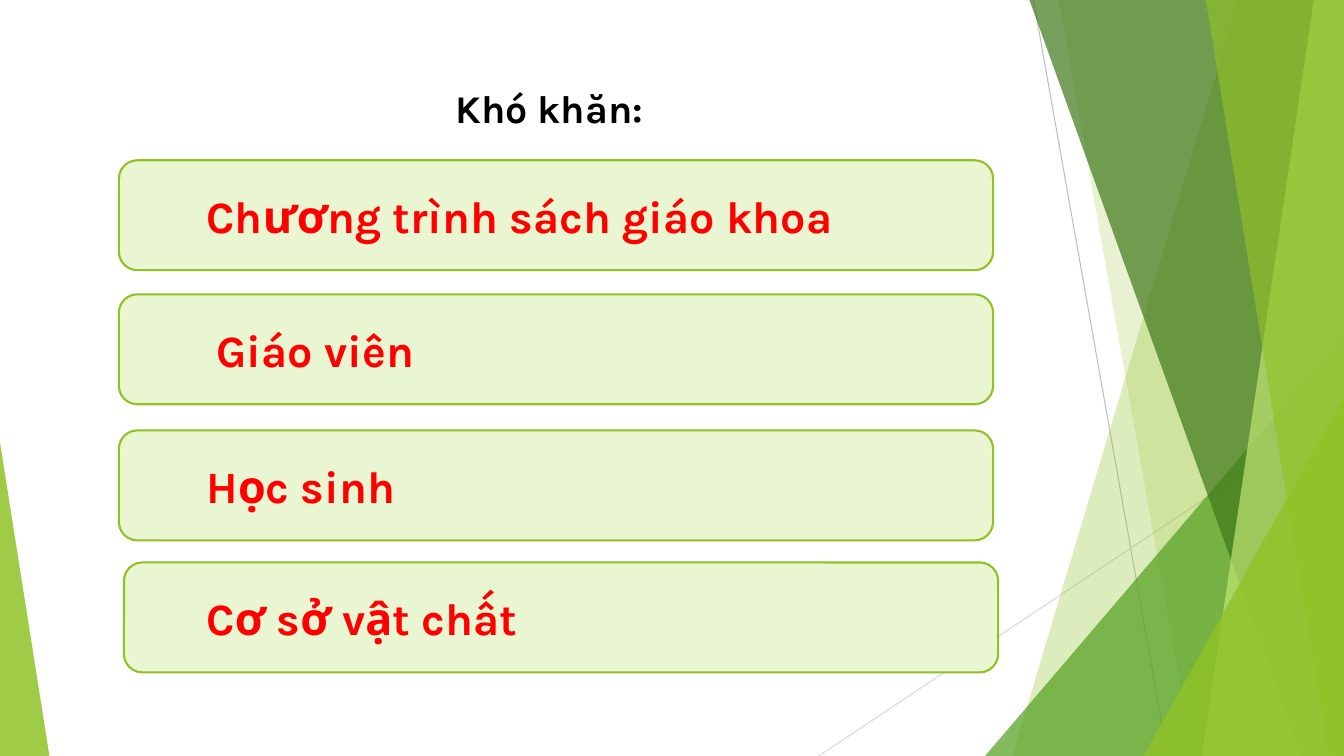
import pptx
import pptx.dml.color
import pptx.enum.shapes
import pptx.enum.text
import pptx.oxml.ns
import pptx.util
from lxml import etree

Inches = pptx.util.Inches
RGBColor = pptx.dml.color.RGBColor
MSO_SHAPE = pptx.enum.shapes.MSO_SHAPE
qn = pptx.oxml.ns.qn

WHITE = RGBColor(0xFF, 0xFF, 0xFF)
BLACK = RGBColor(0, 0, 0)
RED = RGBColor(0xFF, 0, 0)
GREY = RGBColor(0xBF, 0xBF, 0xBF)
PALE_GREY = RGBColor(0xD9, 0xD9, 0xD9)
LIME = RGBColor(0x90, 0xC2, 0x26)
PALE_LIME = RGBColor(0xC0, 0xE4, 0x74)
LEAF = RGBColor(0x54, 0xA0, 0x21)
FOREST = RGBColor(0x3F, 0x78, 0x19)
CARD_FILL = RGBColor(0xEA, 0xF6, 0xD1)

WIDTH, HEIGHT = 13.33, 7.5


class SlideBuilder:
    """Holds the text style and the slide being built."""

    font_format = {"name": "Karla", "bold": True}
    frame_format = {
        "word_wrap": True,
        "auto_size": pptx.enum.text.MSO_AUTO_SIZE.SHAPE_TO_FIT_TEXT,
        "vertical_anchor": pptx.enum.text.MSO_ANCHOR.TOP,
    }

    def __init__(self, slide):
        self.slide = slide
        slide.background.fill.solid()
        slide.background.fill.fore_color.rgb = WHITE

    def paint(self, shape, color, opacity=100):
        shape.shadow.inherit = False
        shape.line.fill.background()
        shape.fill.solid()
        shape.fill.fore_color.rgb = color
        if opacity < 100:
            tint = shape._element.spPr.find(".//" + qn("a:srgbClr"))
            etree.SubElement(tint, qn("a:alpha"), val=str(opacity * 1000))

    def ray(self, start, end, color):
        ray = self.slide.shapes.add_connector(
            pptx.enum.shapes.MSO_CONNECTOR.STRAIGHT,
            *map(Inches, start + end))
        ray.line.color.rgb = color
        ray.line.width = pptx.util.Pt(0.75)
        etree.SubElement(ray._element.spPr, qn("a:effectLst"))

    def band(self, top_left, bottom_left, color, opacity):
        """Full-height facet that reaches the right edge of the slide."""
        corners = [(WIDTH, 0), (WIDTH, HEIGHT), (bottom_left, HEIGHT)]
        outline = self.slide.shapes.build_freeform(Inches(top_left), 0)
        outline.add_line_segments(
            [(Inches(x), Inches(y)) for x, y in corners], close=True)
        self.paint(outline.convert_to_shape(), color, opacity)

    def corner(self, left, top, width, apex, color, opacity):
        """Triangle that stands on the bottom edge of the slide."""
        corner = self.slide.shapes.add_shape(
            MSO_SHAPE.ISOSCELES_TRIANGLE,
            *map(Inches, (left, top, width, HEIGHT - top)))
        corner.adjustments[0] = apex
        self.paint(corner, color, opacity)

    def card(self, left, top):
        card = self.slide.shapes.add_shape(
            MSO_SHAPE.ROUNDED_RECTANGLE,
            *map(Inches, (left, top, 8.67, 1.09)))
        self.paint(card, CARD_FILL)
        card.line.color.rgb = LIME
        card.line.width = pptx.util.Pt(1.5)

    def add_wording(self, holder, text, size, color):
        frame = holder.text_frame
        for name, value in self.frame_format.items():
            setattr(frame, name, value)
        paragraph = frame.paragraphs[0]
        paragraph.alignment = pptx.enum.text.PP_ALIGN.LEFT
        run = paragraph.add_run()
        run.text = text
        font_format = {**self.font_format, "size": pptx.util.Pt(size)}
        for name, value in font_format.items():
            setattr(run.font, name, value)
        run.font.color.rgb = color

    def heading(self, text, left, top, width, height):
        heading = self.slide.shapes.title
        place = {"left": left, "top": top, "width": width, "height": height}
        for name, value in place.items():
            setattr(heading, name, Inches(value))
        self.add_wording(heading, text, 28, BLACK)

    def label(self, text, left, top, width):
        label = self.slide.shapes.add_textbox(
            *map(Inches, (left, top, width, 0.64)))
        self.add_wording(label, text, 32, RED)


def main():
    deck = pptx.Presentation()
    deck.slide_width, deck.slide_height = Inches(WIDTH), Inches(HEIGHT)
    difficulties = SlideBuilder(deck.slides.add_slide(deck.slide_layouts[5]))

    # Faceted backdrop, from back to front
    difficulties.ray((10.25, 0), (11.58, HEIGHT), GREY)
    difficulties.ray((WIDTH, 4.03), (8.12, HEIGHT), PALE_GREY)
    difficulties.band(12.28, 10.04, LIME, 30)
    difficulties.band(10.5, 11.83, LIME, 20)
    difficulties.corner(9.77, 3.33, 3.56, 1, LEAF, 72)
    difficulties.band(10.21, 12.91, FOREST, 70)
    difficulties.band(13.03, 11.92, PALE_LIME, 70)
    difficulties.band(11.96, 13.18, LIME, 65)
    difficulties.corner(11.34, 3.93, 1.99, 1, LIME, 80)
    difficulties.corner(0, 4.39, 0.49, 0, LIME, 85)

    # Heading
    difficulties.heading("Khó khăn:", 4.42, 0.79, 3.94, 0.56)

    # Difficulty cards: text, card left and top, label left and width
    topics = [
        ("Chương trình sách giáo khoa", 1.18, 1.59, 1.95, 6.64),
        ("Giáo viên", 1.18, 2.92, 2.05, 6.01),
        ("Học sinh", 1.18, 4.27, 1.95, 6.01),
        ("Cơ sở vật chất", 1.23, 5.58, 1.95, 6.01),
    ]
    for text, card_left, top, label_left, label_width in topics:
        difficulties.card(card_left, top)
        difficulties.label(text, label_left, top + 0.23, label_width)

    deck.save("out.pptx")


if __name__ == "__main__":
    main()
